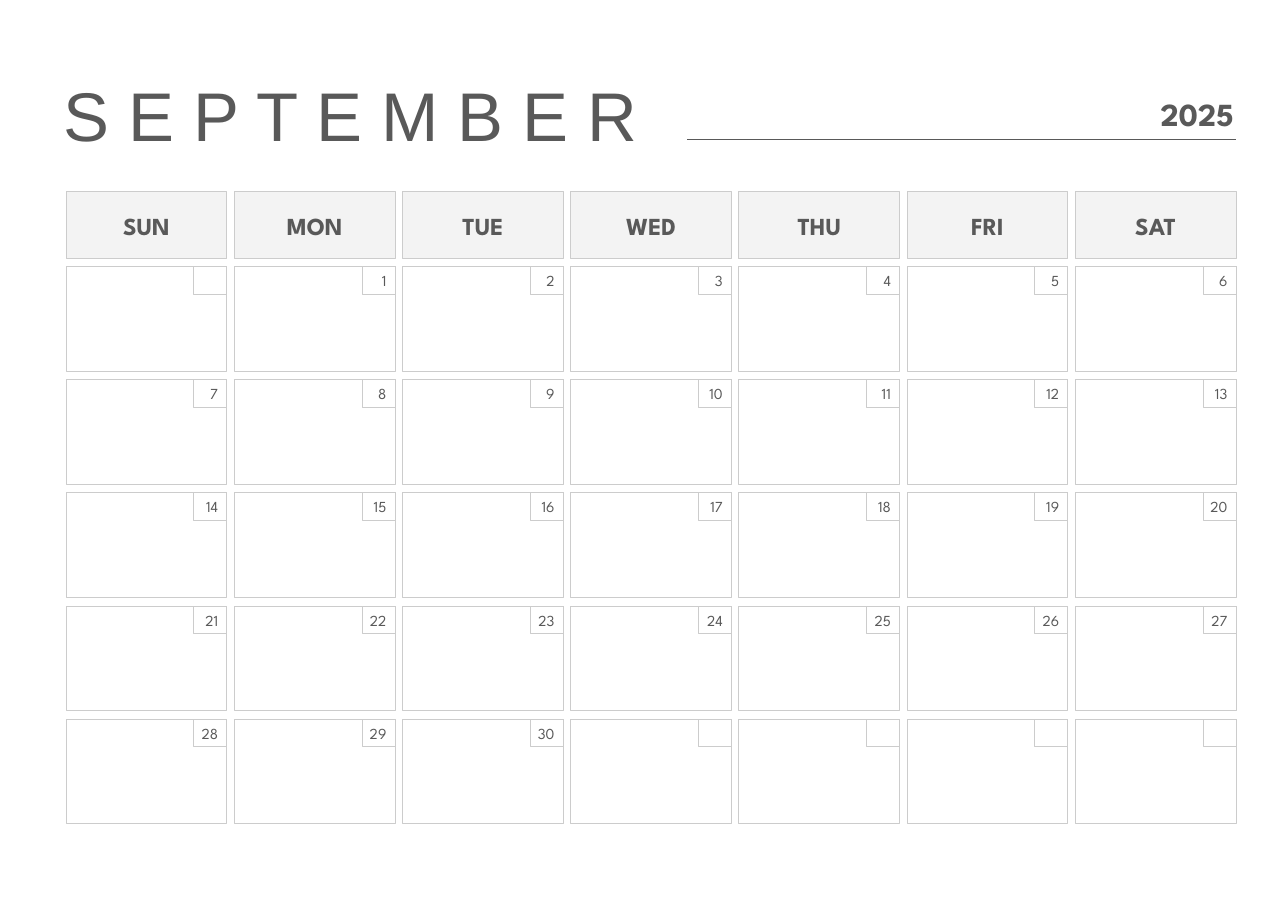
from dataclasses import dataclass
from typing import Any

from pptx import Presentation, util as u
from pptx.dml.color import RGBColor
from pptx.enum import shapes, text
from pptx.oxml.ns import qn
from lxml import etree


@dataclass(frozen=True)
class Theme:
    ink: str = "595959"
    edge: str = "CCCCCC"
    head: str = "F3F3F3"
    paper: str = "FFFFFF"
    sans: str = "Arial"
    face: str = "League Spartan"
    month: float = 45
    year: float = 21
    name: float = 16
    date: float = 10
    rule: float = 0.75


@dataclass(frozen=True)
class Box:
    left: float
    top: float
    width: float
    height: float

    def place(self) -> tuple[int, ...]:
        return tuple(u.Inches(v) for v in (self.left, self.top, self.width, self.height))


@dataclass(frozen=True)
class Grid:
    """Equal cells spread between the outer edges."""
    left: float
    top: float
    right: float
    foot: float
    width: float
    height: float
    cols: int
    rows: int

    def cell(self, col: int, row: int) -> Box:
        step = (self.right - self.left - self.width) / (self.cols - 1)
        drop = (self.foot - self.top - self.height) / (self.rows - 1)
        return Box(self.left + col * step, self.top + row * drop, self.width, self.height)


@dataclass(frozen=True)
class Style:
    size: float
    face: str
    bold: bool
    align: Any
    pads: tuple[float, float, float, float] = (0, 0, 0, 0)
    anchor: Any = text.MSO_ANCHOR.MIDDLE
    grow: bool = False


THEME = Theme()
ALIGN = text.PP_ALIGN
MONTH = Style(THEME.month, THEME.sans, False, ALIGN.LEFT, anchor=text.MSO_ANCHOR.TOP, grow=True)
YEAR = Style(THEME.year, THEME.face, True, ALIGN.RIGHT)
NAME = Style(THEME.name, THEME.face, True, ALIGN.CENTER, (0.1, 0.1, 0.1, 0.1))
DATE = Style(THEME.date, THEME.face, False, ALIGN.RIGHT, (0, 0.04, 0.08, 0.04), grow=True)

WEEK = ("SUN", "MON", "TUE", "WED", "THU", "FRI", "SAT")
FIRST, LAST = 1, 30  # column of the first day, length of the month
DAYS = Grid(0.6, 2.42, 11.22, 7.48, 1.46, 0.95, len(WEEK), 5)
HEAD_TOP, HEAD_HIGH = 1.74, 0.61
TAB_WIDE, TAB_HIGH = 0.3, 0.25


def color(code: str) -> RGBColor:
    return RGBColor.from_string(code)


def write(shape: Any, words: str, style: Style) -> None:
    frame = shape.text_frame
    frame.text = words
    frame.word_wrap = True
    frame.auto_size = (text.MSO_AUTO_SIZE.SHAPE_TO_FIT_TEXT if style.grow
                       else text.MSO_AUTO_SIZE.NONE)
    frame.vertical_anchor = style.anchor
    (frame.margin_left, frame.margin_top,
     frame.margin_right, frame.margin_bottom) = (u.Inches(p) for p in style.pads)
    line = frame.paragraphs[0]
    line.alignment = style.align
    for run in line.runs:
        run.font.name = style.face
        run.font.size = u.Pt(style.size)
        run.font.bold = style.bold
        run.font.color.rgb = color(THEME.ink)


def draw(host: Any, box: Box, fill: str = "", edge: str = "",
         kind: Any = shapes.MSO_SHAPE.RECTANGLE) -> Any:
    shape = host.add_shape(kind, *box.place())
    shape.shadow.inherit = False
    if fill:
        shape.fill.solid()
        shape.fill.fore_color.rgb = color(fill)
    else:
        shape.fill.background()
    if edge:
        shape.line.color.rgb = color(edge)
        shape.line.width = u.Pt(THEME.rule)
    else:
        shape.line.fill.background()
    return shape


def banner(slide: Any) -> None:
    # Month
    title = slide.shapes.title
    title.left, title.top, title.width, title.height = Box(0.58, 0.66, 5.71, 0.76).place()
    write(title, "S E P T E M B E R", MONTH)

    # Year
    year = draw(slide.shapes, Box(10, 0.79, 1.22, 0.48),
                kind=shapes.MSO_SHAPE.ROUNDED_RECTANGLE)
    write(year, "2025", YEAR)


def weeks(slide: Any) -> None:
    cells = slide.shapes.add_group_shape().shapes
    # Weekday names
    for col, name in enumerate(WEEK):
        left = DAYS.cell(col, 0).left
        head = draw(cells, Box(left, HEAD_TOP, DAYS.width, HEAD_HIGH), THEME.head, THEME.edge)
        write(head, name, NAME)

    # Day cells, with a date tab in each top right corner
    tabs = slide.shapes.add_group_shape().shapes
    for row in range(DAYS.rows):
        for col in range(DAYS.cols):
            cell = DAYS.cell(col, row)
            draw(cells, cell, THEME.paper, THEME.edge)
            left = cell.left + cell.width - TAB_WIDE
            tab = draw(tabs, Box(left, cell.top, TAB_WIDE, TAB_HIGH), edge=THEME.edge)
            day = row * DAYS.cols + col - FIRST + 1
            if 1 <= day <= LAST:
                write(tab, str(day), DATE)


def rule(slide: Any) -> None:
    ends = (u.Inches(v) for v in (6.24, 1.27, DAYS.right, 1.27))
    line = slide.shapes.add_connector(shapes.MSO_CONNECTOR.STRAIGHT, *ends)
    line.line.color.rgb = color(THEME.ink)
    line.line.width = u.Pt(THEME.rule)
    etree.SubElement(line._element.spPr, qn("a:effectLst"))


def main() -> None:
    deck = Presentation()
    deck.slide_width, deck.slide_height = u.Inches(11.69), u.Inches(8.27)
    slide = deck.slides.add_slide(deck.slide_layouts[5])
    banner(slide)
    weeks(slide)
    rule(slide)
    deck.save("out.pptx")


if __name__ == "__main__":
    main()
